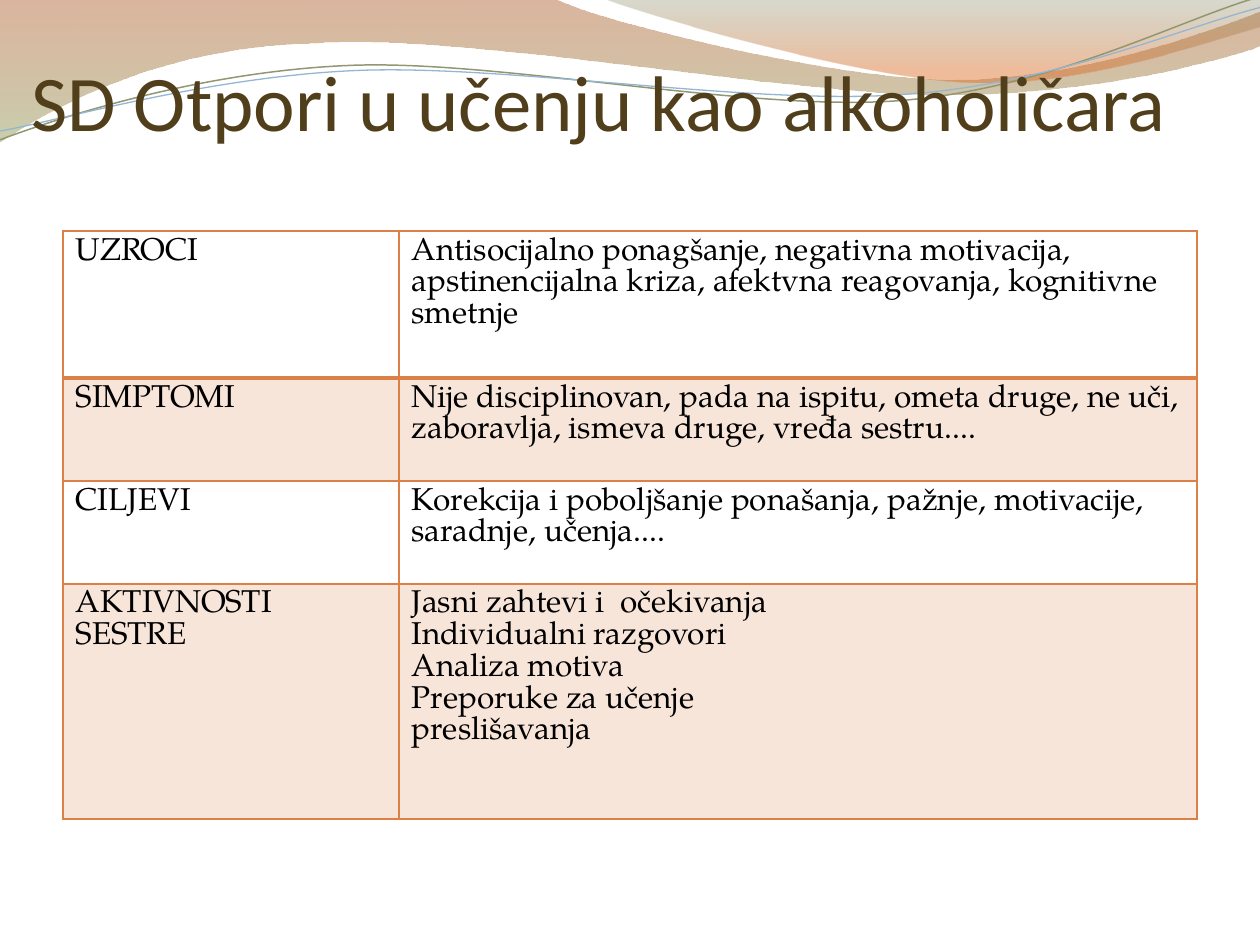
from lxml import etree
from pptx import Presentation
from pptx.dml.color import RGBColor
from pptx.enum.text import MSO_ANCHOR
from pptx.oxml.ns import qn
from pptx.util import Inches, Pt

BOTTOM = MSO_ANCHOR.BOTTOM
BLACK = RGBColor(0x00, 0x00, 0x00)
BROWN = RGBColor(0x51, 0x3E, 0x1B)
ORANGE = RGBColor(0xDD, 0x80, 0x47)
RUST = RGBColor(0xAF, 0x5C, 0x29)
MOSS = RGBColor(0x9D, 0xA6, 0x6B)
SAGE = RGBColor(0x7D, 0x83, 0x5B)
FLAME = RGBColor(0xDD, 0x6B, 0x24)
OLIVE = RGBColor(0x92, 0x97, 0x72)
SKY = RGBColor(0x94, 0xB6, 0xD2)
PLAIN_TABLE_STYLE = "{2D5ABB26-0587-4C30-8999-92F81FD0307C}"

# Outlines in inches: a pair is a straight step, six numbers a Bezier curve
LEFT_WAVE = [
    (0, 0), (4.4, -0.01),
    (4.76, 0.17, 6.64, 0.63, 7.58, 0.63), (8.53, 0.63, 9.58, 0.26, 10, 0.09),
    (10.01, 0.36),
    (9.83, 0.44, 8.7, 0.76, 7.46, 0.75), (6.22, 0.75, 3.82, 0.28, 2.57, 0.34),
    (1.29, 0.36, 0.46, 0.83, -0.01, 1.13), (0, 0),
]
RIGHT_WAVE = [
    (4.79, -0.01),
    (5.09, 0.11, 6.82, 0.62, 7.69, 0.65), (8.56, 0.69, 9.61, 0.32, 10, 0.21),
    (10, 0), (4.79, -0.01),
]
OLIVE_CURVE = [
    (0, 1.11),
    (0.48, 0.93, 1.58, 0.57, 2.77, 0.52), (3.95, 0.47, 5.93, 0.89, 7.13, 0.8),
    (8.33, 0.71, 9.38, 0.15, 9.98, -0.02),
]
SKY_CURVE = [
    (0, 1.04),
    (0.47, 0.96, 1.64, 0.61, 2.83, 0.56), (4.03, 0.51, 5.97, 0.84, 7.17, 0.75),
    (8.36, 0.67, 9.41, 0.21, 10, 0.06),
]

CARE_PLAN = [
    ("UZROCI", ["Antisocijalno ponagšanje, negativna motivacija, apstinencijalna "
                "kriza, afektvna reagovanja, kognitivne smetnje"]),
    ("SIMPTOMI", ["Nije disciplinovan, pada na ispitu, ometa druge, ne uči, "
                  "zaboravlja, ismeva druge, vređa sestru...."]),
    ("CILJEVI", ["Korekcija i poboljšanje ponašanja, pažnje, motivacije, "
                 "saradnje, učenja...."]),
    ("AKTIVNOSTI SESTRE", ["Jasni zahtevi i  očekivanja", "Individualni razgovori",
                           "Analiza motiva", "Preporuke za učenje",
                           "preslišavanja"]),
]
# The table sits on a grid of sixtieths of an inch
GRID = Inches(1) // 60
TABLE_LEFT, TABLE_TOP = 30, 110
COLUMN_WIDTHS = [160, 380]
ROW_HEIGHTS = [70, 49, 49, 112]


def set_alpha(color_element, percent):
    alpha = etree.SubElement(color_element, qn("a:alpha"))
    alpha.set("val", str(percent * 1000))


def bend_segments(shape, outline):
    """Join the three straight steps of each curve into one Bezier segment."""
    steps = iter(list(shape._element.iter(qn("a:lnTo"))))
    for part in outline[1:]:
        first = next(steps)
        if len(part) == 6:
            curve = etree.Element(qn("a:cubicBezTo"))
            first.addprevious(curve)
            for step in (first, next(steps), next(steps)):
                curve.append(step[0])
                step.getparent().remove(step)


def add_outline(slide, outline, close):
    points = [(Inches(part[i]), Inches(part[i + 1]))
              for part in outline for i in range(0, len(part), 2)]
    builder = slide.shapes.build_freeform(*points[0])
    builder.add_line_segments(points[1:], close=close)
    shape = builder.convert_to_shape()
    bend_segments(shape, outline)
    shape.shadow.inherit = False
    return shape


def add_wave(slide, outline, stops):
    wave = add_outline(slide, outline, close=True)
    wave.line.fill.background()
    wave.fill.gradient()
    wave.fill.gradient_angle = 270  # top to bottom
    for stop, (position, color, _) in zip(wave.fill.gradient_stops, stops):
        stop.position = position
        stop.color.rgb = color
    colors = wave._element.spPr.iter(qn("a:srgbClr"))
    for color_element, (_, _, opacity) in zip(list(colors), stops):
        set_alpha(color_element, opacity)


def add_curve(slide, outline, color, width):
    curve = add_outline(slide, outline, close=False)
    curve.fill.background()
    curve.line.color.rgb = color
    curve.line.width = Pt(width)


def add_title(slide, text):
    title = slide.shapes.add_textbox(Inches(0.25), Inches(0.25),
                                     Inches(9.5), Inches(0.92))
    frame = title.text_frame
    frame.word_wrap = True
    frame.vertical_anchor = BOTTOM
    frame.margin_left = frame.margin_right = frame.margin_bottom = 0
    frame.margin_top = Inches(0.05)
    paragraph = frame.paragraphs[0]
    paragraph.text = text
    paragraph.font.size = Pt(45)
    paragraph.font.name = "Calibri"
    paragraph.font.color.rgb = BROWN


def set_borders(cell, top, bottom):
    properties = cell._tc.get_or_add_tcPr()
    for side, width in (("L", 1), ("R", 1), ("T", top), ("B", bottom)):
        line = etree.SubElement(properties, qn(f"a:ln{side}"), w=str(Pt(width)))
        fill = etree.SubElement(line, qn("a:solidFill"))
        etree.SubElement(fill, qn("a:srgbClr"), val=str(ORANGE))


def fill_cell(cell, lines, row):
    cell.text = "\n".join(lines)
    for paragraph in cell.text_frame.paragraphs:
        paragraph.font.size = Pt(18)
        paragraph.font.name = "TeX Gyre Pagella"
        paragraph.font.color.rgb = BLACK
    # A thicker rule separates the first row from the rest
    set_borders(cell, top=2 if row == 1 else 1, bottom=2 if row == 0 else 1)
    if row % 2:
        cell.fill.solid()
        cell.fill.fore_color.rgb = ORANGE
        tint = cell._tc.tcPr.find(f"{qn('a:solidFill')}/{qn('a:srgbClr')}")
        set_alpha(tint, 20)
    else:
        cell.fill.background()


def add_care_plan(slide):
    table = slide.shapes.add_table(
        len(CARE_PLAN), len(COLUMN_WIDTHS), TABLE_LEFT * GRID, TABLE_TOP * GRID,
        sum(COLUMN_WIDTHS) * GRID, sum(ROW_HEIGHTS) * GRID).table
    table.first_row = False
    table.horz_banding = False
    table._tbl.tblPr.find(qn("a:tableStyleId")).text = PLAIN_TABLE_STYLE
    for column, width in zip(table.columns, COLUMN_WIDTHS):
        column.width = width * GRID
    for row, (heading, lines) in enumerate(CARE_PLAN):
        table.rows[row].height = ROW_HEIGHTS[row] * GRID
        fill_cell(table.cell(row, 0), [heading], row)
        fill_cell(table.cell(row, 1), lines, row)


def main():
    presentation = Presentation()
    presentation.slide_width = Inches(10)
    presentation.slide_height = Inches(7.5)
    slide = presentation.slides.add_slide(presentation.slide_layouts[6])

    # Wave decoration along the top
    add_wave(slide, LEFT_WAVE, [(0, RUST, 45), (1, MOSS, 55)])
    add_wave(slide, RIGHT_WAVE, [(0, SAGE, 30), (0.8, FLAME, 45)])
    add_curve(slide, OLIVE_CURVE, OLIVE, 0.85)
    add_curve(slide, SKY_CURVE, SKY, 0.75)

    # Content
    add_title(slide, "SD Otpori u učenju kao alkoholičara")
    add_care_plan(slide)
    presentation.save("out.pptx")


if __name__ == "__main__":
    main()
